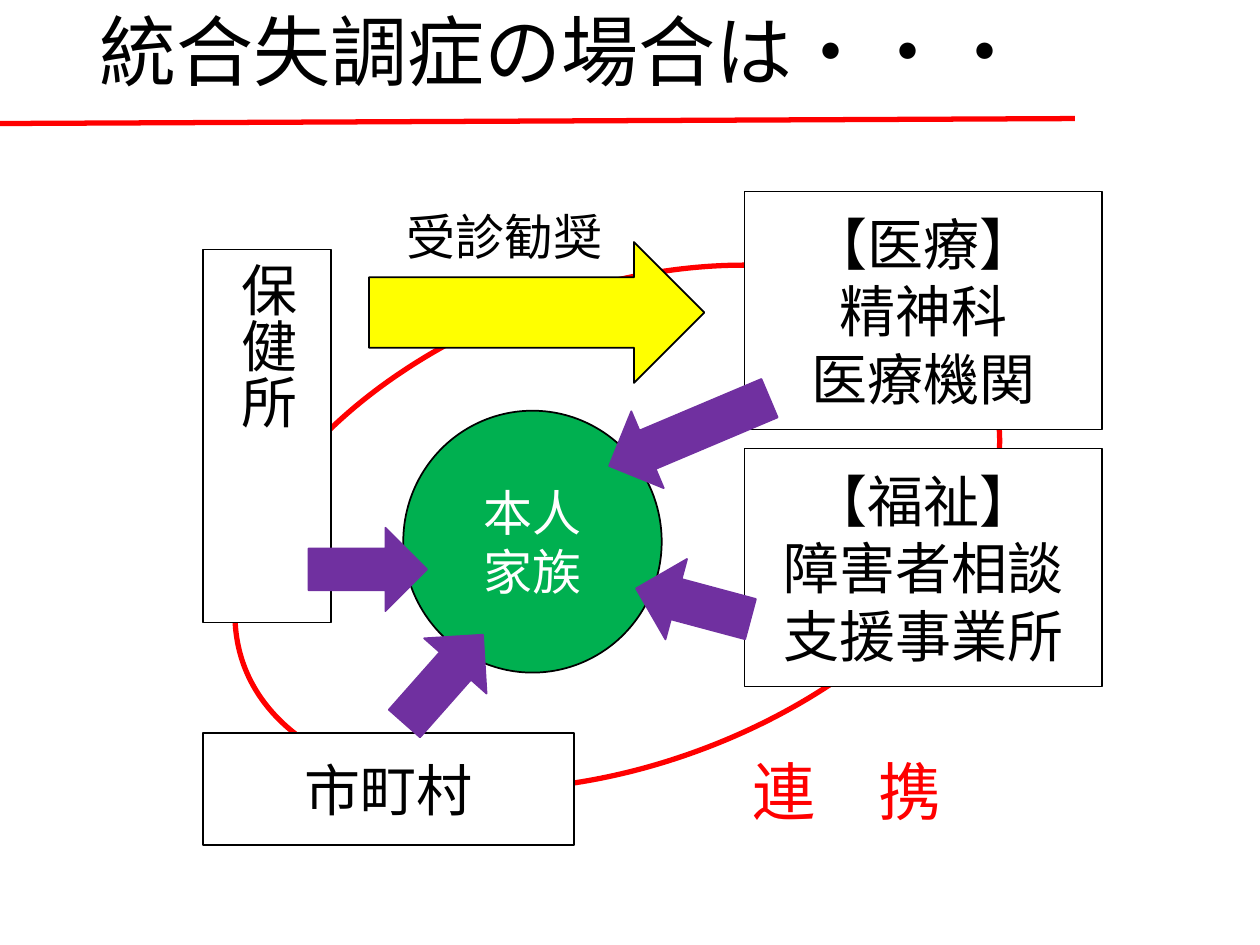
from lxml import etree
from pptx import Presentation
from pptx.dml.color import RGBColor
from pptx.enum.shapes import MSO_CONNECTOR as Connector, MSO_SHAPE as Shape
from pptx.enum.text import MSO_ANCHOR as Anchor, MSO_AUTO_SIZE as AutoSize, PP_ALIGN as Align
from pptx.oxml.ns import qn
from pptx.util import Cm, Pt

BLACK, WHITE, RED = "000000", "FFFFFF", "FF0000"
YELLOW, GREEN, PURPLE = "FFFF00", "00B050", "7030A0"


def add_figure(kind, place, fill, line, width=1, turn=0):
    """Add a preset shape; place is left, top, width, height in cm."""
    figure = page.shapes.add_shape(kind, *map(Cm, place))
    figure.shadow.inherit = False
    figure.rotation = turn
    if fill:
        figure.fill.solid()
        figure.fill.fore_color.rgb = RGBColor.from_string(fill)
    else:
        figure.fill.background()
    figure.line.color.rgb = RGBColor.from_string(line)
    figure.line.width = Pt(width)
    return figure


def write(box, text, size, color=BLACK, align=Align.CENTER, font="Karla"):
    frame = box.text_frame
    frame.text = text
    frame.word_wrap = True
    frame.vertical_anchor = Anchor.MIDDLE
    for para in frame.paragraphs:
        para.alignment = align
        for span in para.runs:
            span.font.name = font
            span.font.size = Pt(size)
            span.font.color.rgb = RGBColor.from_string(color)


deck = Presentation()
deck.slide_width, deck.slide_height = Cm(25.4), Cm(19.05)
page = deck.slides.add_slide(deck.slide_layouts[5])

# Heading and its rule
rule = page.shapes.add_connector(Connector.STRAIGHT, Cm(0), Cm(2.49), Cm(21.67), Cm(2.39))
rule.line.color.rgb = RGBColor.from_string(RED)
rule.line.width = Pt(3)
etree.SubElement(rule.element.spPr, qn("a:effectLst"))

title = page.shapes.title
title.left, title.top, title.width, title.height = Cm(1.75), Cm(-0.08), Cm(19.91), Cm(2.39)
write(title, "統合失調症の場合は・・・", 44, align=Align.LEFT)
title.text_frame.auto_size = AutoSize.NONE
title.text_frame.paragraphs[0].line_spacing = 0.9

# Ring of cooperation behind the organisations
add_figure(Shape.OVAL, (4.42, 5.84, 16.05, 9.58), None, RED, 3, 339.7)

health_center = add_figure(Shape.RECTANGLE, (4.09, 5.03, 2.59, 7.52), WHITE, BLACK)
write(health_center, "保健所", 32, align=Align.LEFT)
health_center.element.txBody.bodyPr.set("vert", "eaVert")

organisations = [
    ("【医療】\n精神科\n医療機関", (15.01, 3.86, 7.21, 4.8)),
    ("【福祉】\n障害者相談支援事業所", (15.01, 9.04, 7.21, 4.8)),
    ("市町村", (4.09, 14.78, 7.49, 2.26)),
]
for name, place in organisations:
    write(add_figure(Shape.RECTANGLE, place, WHITE, BLACK), name, 32)

# Patient and family in the middle
add_figure(Shape.RIGHT_ARROW, (7.44, 4.88, 6.76, 2.84), YELLOW, BLACK)
family = add_figure(Shape.OVAL, (8.13, 8.28, 5.21, 5.28), GREEN, BLACK)
write(family, "本人\n家族", 28, WHITE, font="Noto Sans CJK JP")

advice = page.shapes.add_textbox(Cm(7.95), Cm(4.04), Cm(4.5), Cm(1.45))
write(advice, "受診勧奨", 28, align=Align.LEFT)
advice.text_frame.word_wrap = False
advice.text_frame.vertical_anchor = Anchor.TOP
advice.text_frame.auto_size = AutoSize.SHAPE_TO_FIT_TEXT

# Support from each organisation: left, top, length, rotation
for left, top, length, turn in [
    (6.22, 10.64, 2.39, 0),
    (7.75, 12.85, 2.39, 311.5),
    (12.14, 7.87, 3.51, 157.1),
    (12.78, 11.33, 2.39, 195),
]:
    add_figure(Shape.RIGHT_ARROW, (left, top, length, 1.68), PURPLE, PURPLE, turn=turn)

cooperation = page.shapes.add_textbox(Cm(13.34), Cm(14.81), Cm(7.49), Cm(2.26))
write(cooperation, "連　携", 36, RED)

deck.save("out.pptx")
